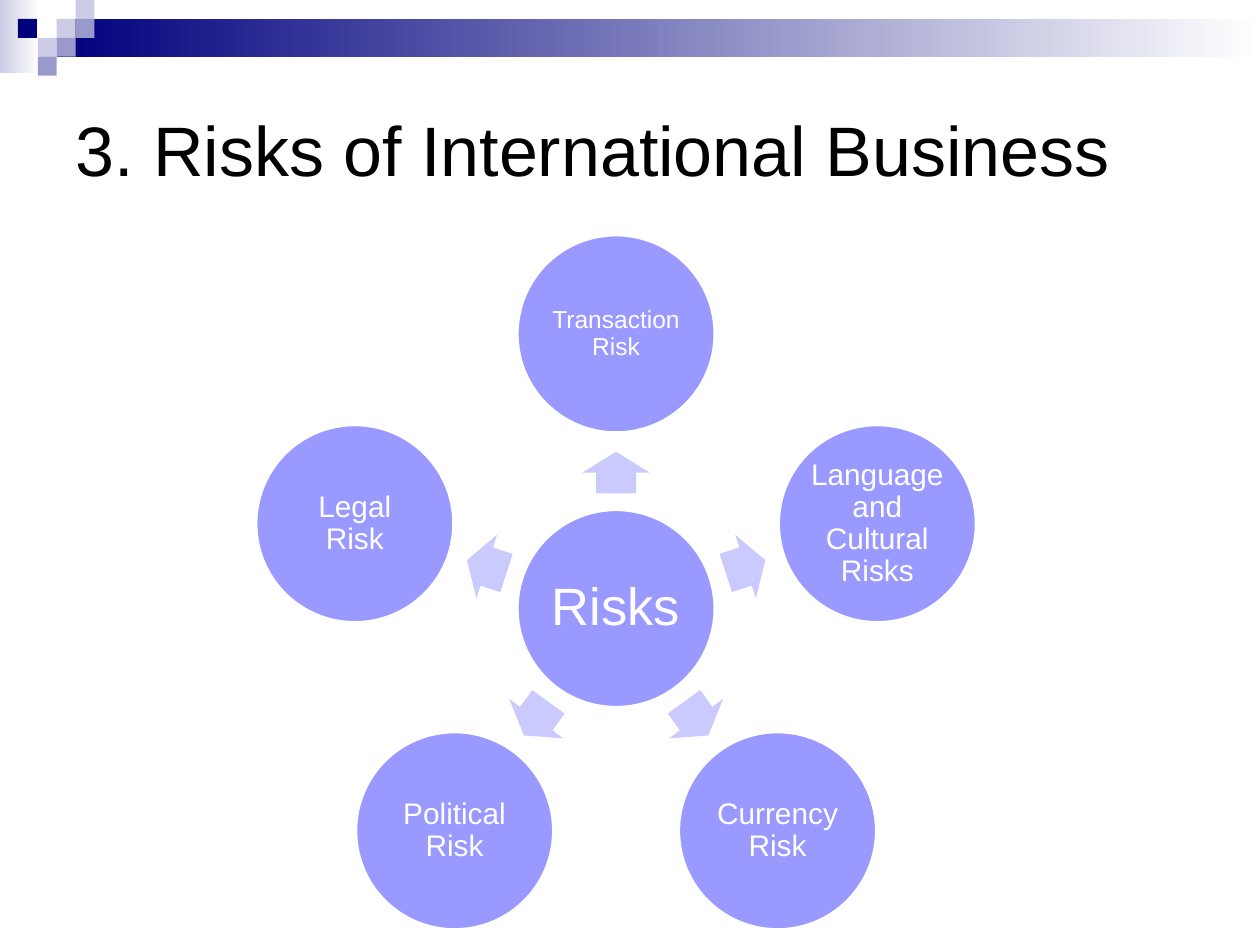
from dataclasses import dataclass
from math import cos, radians, sin

from pptx import Presentation
from pptx.dml.color import RGBColor
from pptx.enum.shapes import MSO_SHAPE as Preset
from pptx.enum.text import MSO_ANCHOR as Anchor, MSO_AUTO_SIZE as AutoSize, PP_ALIGN as Align
from pptx.shapes.autoshape import Shape
from pptx.slide import Slide
from pptx.text.text import TextFrame
from pptx.util import Inches, Pt

NAVY = RGBColor(0x00, 0x00, 0x7D)
LAVENDER = RGBColor(0xCC, 0xCC, 0xE6)
SLATE = RGBColor(0x99, 0x99, 0xCC)
PERIWINKLE = RGBColor(0x99, 0x99, 0xFF)
PALE = RGBColor(0xCA, 0xCA, 0xFF)
WHITE = RGBColor(0xFF, 0xFF, 0xFF)
BLACK = RGBColor(0x00, 0x00, 0x00)

FONT = "Arial"
WIDTH, HEIGHT = 10, 7.5
CELL = 0.15
HUB_X, HUB_Y = 0.489 * WIDTH, 0.644 * HEIGHT
DIAMETER = 1.56
ORBIT = 2.18
ARROW_ORBIT = 1.08
ARROW_LENGTH, ARROW_WIDTH = 0.33, 0.53


@dataclass
class Band:
    column: float
    row: float
    columns: float
    rows: float
    start: RGBColor


@dataclass
class Square:
    column: float
    row: float
    color: RGBColor


@dataclass
class Risk:
    label: str
    size: int


BANDS = [
    Band(0, 0, 2.07, 3.87, LAVENDER),
    Band(3, 1, WIDTH / CELL - 3, 2.0, NAVY),
]
SQUARES = [
    Square(3, 1, LAVENDER),
    Square(4, 0, LAVENDER),
    Square(4, 1, SLATE),
    Square(2, 2, LAVENDER),
    Square(0.95, 1, NAVY),
    Square(3, 2, SLATE),
    Square(2, 3, SLATE),
]
RISKS = [
    Risk("Transaction Risk", 14),
    Risk("Language and Cultural Risks", 17),
    Risk("Currency Risk", 17),
    Risk("Political Risk", 17),
    Risk("Legal Risk", 17),
]


def add_plain_shape(slide: Slide, preset: Preset, left: float, top: float,
                    width: float, height: float) -> Shape:
    shape = slide.shapes.add_shape(
        preset, Inches(left), Inches(top), Inches(width), Inches(height))
    shape.shadow.inherit = False
    shape.line.fill.background()
    return shape


def add_band(slide: Slide, band: Band) -> None:
    shape = add_plain_shape(slide, Preset.RECTANGLE, band.column * CELL, band.row * CELL,
                            band.columns * CELL, band.rows * CELL)
    shape.fill.gradient()
    shape.fill.gradient_angle = 0
    for stop, color, position in zip(shape.fill.gradient_stops, (band.start, WHITE), (0, 1)):
        stop.color.rgb = color
        stop.position = position


def add_square(slide: Slide, square: Square) -> None:
    shape = add_plain_shape(slide, Preset.RECTANGLE, square.column * CELL, square.row * CELL,
                            CELL, CELL)
    shape.fill.solid()
    shape.fill.fore_color.rgb = square.color


def write_text(frame: TextFrame, text: str, size: int, color: RGBColor, align: Align) -> None:
    frame.word_wrap = True
    frame.auto_size = AutoSize.NONE
    frame.vertical_anchor = Anchor.MIDDLE
    para = frame.paragraphs[0]
    para.alignment = align
    span = para.add_run()
    span.text = text
    span.font.name = FONT
    span.font.size = Pt(size)
    span.font.color.rgb = color


def add_circle(slide: Slide, x: float, y: float, risk: Risk, inset: float = 0.02) -> None:
    circle = add_plain_shape(slide, Preset.OVAL, x - DIAMETER / 2, y - DIAMETER / 2,
                             DIAMETER, DIAMETER)
    circle.fill.solid()
    circle.fill.fore_color.rgb = PERIWINKLE
    circle.line.color.rgb = WHITE
    circle.line.width = Pt(1)
    frame = circle.text_frame
    frame.margin_left = frame.margin_right = Inches(inset)
    frame.margin_top = frame.margin_bottom = Inches(inset)
    write_text(frame, risk.label, risk.size, WHITE, Align.CENTER)
    frame.paragraphs[0].line_spacing = 0.9


def add_arrow(slide: Slide, x: float, y: float, angle: float) -> None:
    arrow = add_plain_shape(slide, Preset.RIGHT_ARROW, x - ARROW_LENGTH / 2,
                            y - ARROW_WIDTH / 2, ARROW_LENGTH, ARROW_WIDTH)
    arrow.adjustments[0] = 0.6
    arrow.adjustments[1] = 0.5
    arrow.rotation = angle % 360
    arrow.fill.solid()
    arrow.fill.fore_color.rgb = PALE


def around_hub(radius: float, angle: float) -> tuple[float, float]:
    return HUB_X + radius * cos(radians(angle)), HUB_Y + radius * sin(radians(angle))


def add_title(slide: Slide, text: str) -> None:
    title = slide.shapes.title
    title.left, title.top = Inches(0.05 * WIDTH), Inches(0.5)
    title.width, title.height = Inches(0.9 * WIDTH), Inches(1.36)
    write_text(title.text_frame, text, 40, BLACK, Align.LEFT)


def main() -> None:
    deck = Presentation()
    deck.slide_width, deck.slide_height = Inches(WIDTH), Inches(HEIGHT)
    page = deck.slides.add_slide(deck.slide_layouts[5])
    for band in BANDS:
        add_band(page, band)
    for square in SQUARES:
        add_square(page, square)
    add_title(page, "3. Risks of International Business")
    add_circle(page, HUB_X, HUB_Y, Risk("Risks", 30), 0.04)
    for index, risk in enumerate(RISKS):
        angle = index * 360 / len(RISKS) - 90
        add_arrow(page, *around_hub(ARROW_ORBIT, angle), angle)
        add_circle(page, *around_hub(ORBIT, angle), risk)
    deck.save("out.pptx")


if __name__ == "__main__":
    main()
